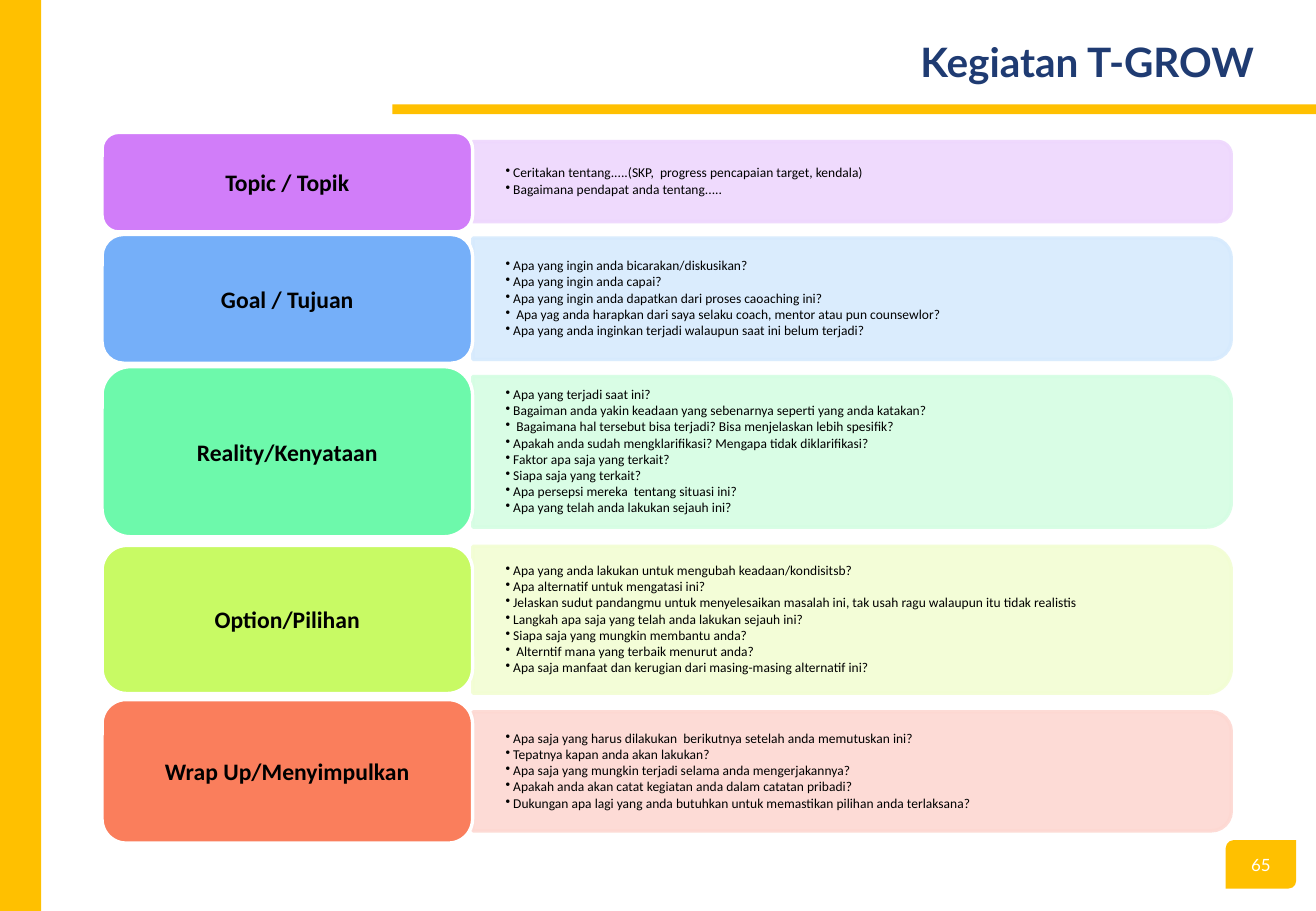
import pptx
import pptx.util
import pptx.dml.color
import pptx.enum.shapes
import pptx.enum.text
import pptx.oxml.ns
import lxml.etree
from dataclasses import dataclass

Pt = pptx.util.Pt
Shape = pptx.enum.shapes.MSO_SHAPE
Align = pptx.enum.text.PP_ALIGN
Anchor = pptx.enum.text.MSO_ANCHOR
qn = pptx.oxml.ns.qn


def rgb(value):
    return pptx.dml.color.RGBColor.from_string(value)


@dataclass(frozen=True)
class Theme:
    accent: str = "FFC000"
    heading: str = "1F3B72"
    ink: str = "000000"
    white: str = "FFFFFF"
    heading_font: str = "Lato"
    body_font: str = "Calibri"
    title_size: float = 24
    card_size: float = 14
    body_size: float = 8
    number_size: float = 10


@dataclass(frozen=True)
class Stage:
    name: str
    card_color: str
    card_top: float
    card_height: float
    panel_color: str
    panel_top: float
    panel_height: float
    questions: tuple


class SlideBuilder:
    def __init__(self, slide, theme):
        self.slide = slide
        self.theme = theme

    def shape(self, kind, left, top, width, height, fill, line=None):
        box = self.slide.shapes.add_shape(kind, Pt(left), Pt(top), Pt(width), Pt(height))
        box.shadow.inherit = False
        box.fill.solid()
        box.fill.fore_color.rgb = rgb(fill)
        if line:
            box.line.color.rgb = rgb(line)
            box.line.width = Pt(2)
        else:
            box.line.fill.background()
        return box

    def textbox(self, left, top, width, height):
        return self.slide.shapes.add_textbox(Pt(left), Pt(top), Pt(width), Pt(height))

    def frame(self, box, side, edge):
        frame = box.text_frame
        frame.word_wrap = True
        frame.vertical_anchor = Anchor.MIDDLE
        frame.margin_left = frame.margin_right = Pt(side)
        frame.margin_top = frame.margin_bottom = Pt(edge)
        return frame

    def span(self, para, text, font, size, color, bold=False):
        span = para.add_run()
        span.text = text
        span.font.name = font
        span.font.size = Pt(size)
        span.font.bold = bold
        span.font.color.rgb = rgb(color)

    def label(self, box, text, font, size, color, bold=False, align=Align.CENTER):
        para = self.frame(box, 7.2, 3.6).paragraphs[0]
        para.alignment = align
        self.span(para, text, font, size, color, bold)

    def panel(self, left, top, width, height, color):
        # Turned a quarter so that the rounded corners face right
        box = self.shape(Shape.ROUND_2_SAME_RECTANGLE, left + (width - height) / 2,
                         top + (height - width) / 2, height, width, color, color)
        box.rotation = 90
        for tint in box.fill._xPr.iter(qn("a:srgbClr")):
            lxml.etree.SubElement(tint, qn("a:alpha"), val="90000")

    def bullets(self, left, top, width, height, lines):
        frame = self.frame(self.textbox(left, top, width, height), 19.4, 0)
        for index, line in enumerate(lines):
            para = frame.paragraphs[0] if index == 0 else frame.add_paragraph()
            props = para._p.get_or_add_pPr()
            props.set("marL", str(Pt(4.5)))
            props.set("indent", str(-Pt(4.5)))
            lxml.etree.SubElement(props, qn("a:buChar"), char="•")
            para.line_spacing = 0.9
            para.space_after = Pt(1)
            self.span(para, line, self.theme.body_font, self.theme.body_size, self.theme.ink)

    def stage(self, stage):
        theme = self.theme
        area = (280.3, stage.panel_top, 449.5, stage.panel_height)
        self.panel(*area, stage.panel_color)
        self.bullets(*area, stage.questions)
        card = self.shape(Shape.ROUNDED_RECTANGLE, 60.5, stage.card_top, 219.6,
                          stage.card_height, stage.card_color, theme.white)
        self.label(card, stage.name, theme.body_font, theme.card_size, theme.ink, True)


STAGES = (
    Stage("Topic / Topik", "D17DF9", 78.5, 59, "EED7FD", 83.9, 47.5, (
        "Ceritakan tentang.....(SKP,  progress pencapaian target, kendala)",
        "Bagaimana pendapat anda tentang.....",
    )),
    Stage("Goal / Tujuan", "75AFF9", 139, 76.3, "D6EAFD", 141.1, 72, (
        "Apa yang ingin anda bicarakan/diskusikan?",
        "Apa yang ingin anda capai?",
        "Apa yang ingin anda dapatkan dari proses caoaching ini?",
        " Apa yag anda harapkan dari saya selaku coach, mentor atau pun counsewlor?",
        "Apa yang anda inginkan terjadi walaupun saat ini belum terjadi?",
    )),
    Stage("Reality/Kenyataan", "6DF9AB", 217.4, 100.8, "D5FDE3", 223.2, 89.3, (
        "Apa yang terjadi saat ini?",
        "Bagaiman anda yakin keadaan yang sebenarnya seperti yang anda katakan?",
        " Bagaimana hal tersebut bisa terjadi? Bisa menjelaskan lebih spesifik?",
        "Apakah anda sudah mengklarifikasi? Mengapa tidak diklarifikasi?",
        "Faktor apa saja yang terkait?",
        "Siapa saja yang terkait?",
        "Apa persepsi mereka  tentang situasi ini?",
        "Apa yang telah anda lakukan sejauh ini?",
    )),
    Stage("Option/Pilihan", "C8FA64", 323.3, 87.8, "F2FDD3", 323.8, 87.1, (
        "Apa yang anda lakukan untuk mengubah keadaan/kondisitsb?",
        "Apa alternatif untuk mengatasi ini?",
        "Jelaskan sudut pandangmu untuk menyelesaikan masalah ini, tak usah ragu walaupun itu tidak realistis",
        "Langkah apa saja yang telah anda lakukan sejauh ini?",
        "Siapa saja yang mungkin membantu anda?",
        " Alterntif mana yang terbaik menurut anda?",
        "Apa saja manfaat dan kerugian dari masing-masing alternatif ini?",
    )),
    Stage("Wrap Up/Menyimpulkan", "FA7E5C", 414.7, 85, "FDD8D2", 421.9, 70.6, (
        "Apa saja yang harus dilakukan  berikutnya setelah anda memutuskan ini?",
        "Tepatnya kapan anda akan lakukan?",
        "Apa saja yang mungkin terjadi selama anda mengerjakannya?",
        "Apakah anda akan catat kegiatan anda dalam catatan pribadi?",
        "Dukungan apa lagi yang anda butuhkan untuk memastikan pilihan anda terlaksana?",
    )),
)


def main():
    deck = pptx.Presentation()
    deck.slide_width, deck.slide_height = Pt(780), Pt(540)
    theme = Theme()
    page = SlideBuilder(deck.slides.add_slide(deck.slide_layouts[6]), theme)

    # Accent bars
    page.shape(Shape.RECTANGLE, 232.6, 61.9, 547.4, 5.8, theme.accent)
    page.shape(Shape.RECTANGLE, 0, 0, 24.5, 540, theme.accent)

    # Title
    page.label(page.textbox(230.4, 16.6, 519.8, 39.6), "Kegiatan T-GROW",
               theme.heading_font, theme.title_size, theme.heading, True, Align.RIGHT)

    # Page number
    badge = page.shape(Shape.ROUND_2_DIAG_RECTANGLE, 726.5, 498, 41.8, 28.8, theme.accent)
    page.label(badge, "65", theme.heading_font, theme.number_size, theme.white)

    # Coaching stages
    for stage in STAGES:
        page.stage(stage)

    deck.save("out.pptx")


if __name__ == "__main__":
    main()
